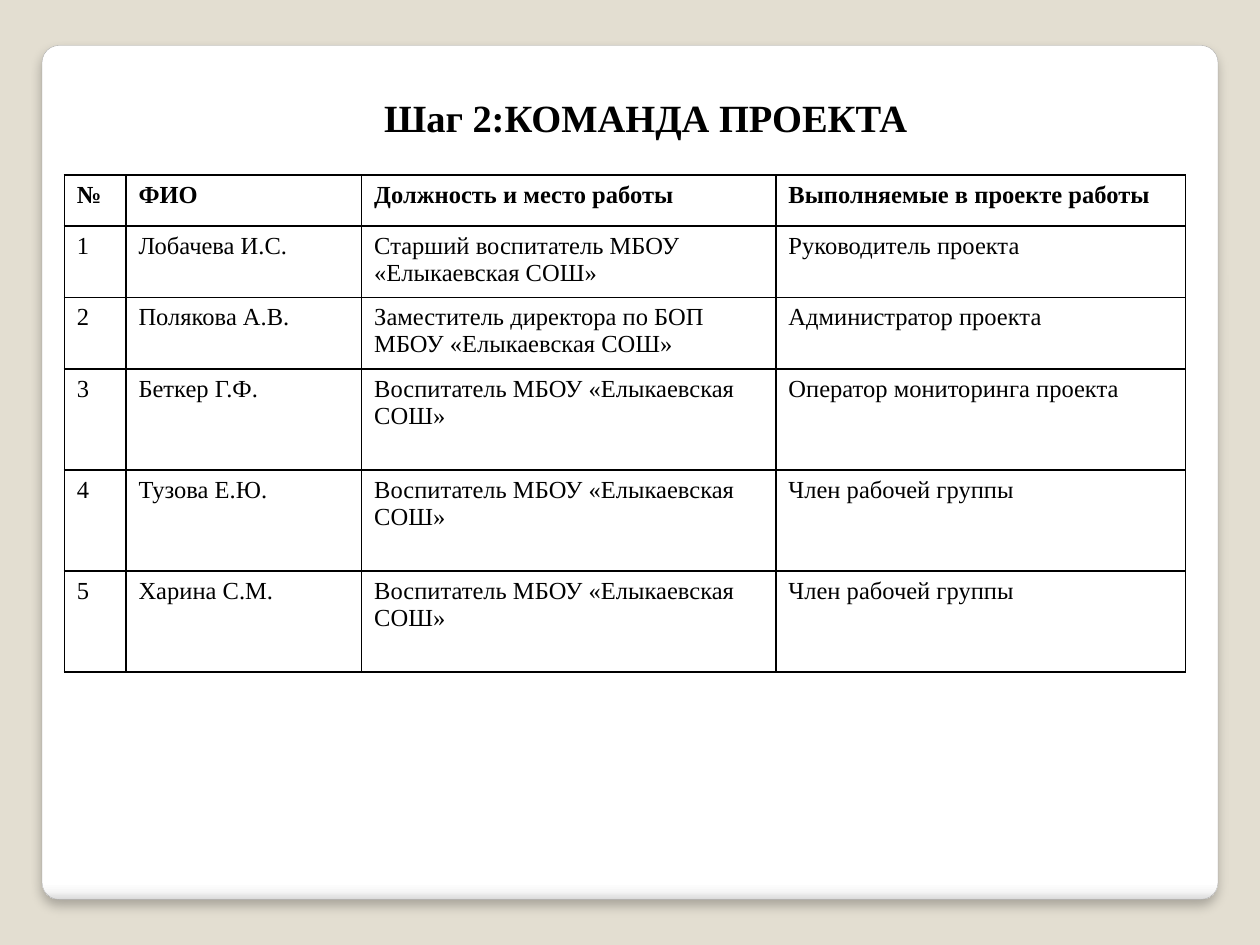
import pptx
import pptx.dml.color
import pptx.enum.shapes
import pptx.enum.text
import pptx.oxml
import pptx.oxml.ns
import pptx.util
from lxml import etree

Pt = pptx.util.Pt
FONT = "Times New Roman"
NAMESPACE = pptx.oxml.ns.nsdecls("a")


def color(hex_string):
    return pptx.dml.color.RGBColor.from_string(hex_string)


def add_text(paragraph, text, size, bold):
    run = paragraph.add_run()
    run.text = text
    run.font.name = FONT
    run.font.size = Pt(size)
    run.font.bold = bold
    run.font.color.rgb = color("000000")


presentation = pptx.Presentation()
presentation.slide_width = Pt(720)
presentation.slide_height = Pt(540)
slide = presentation.slides.add_slide(presentation.slide_layouts[6])
slide.background.fill.solid()
slide.background.fill.fore_color.rgb = color("E3DED1")

# White panel with a darker lower edge and a soft shadow
panel = slide.shapes.add_shape(
    pptx.enum.shapes.MSO_SHAPE.ROUNDED_RECTANGLE, Pt(24), Pt(26), Pt(672), Pt(488))
panel.adjustments[0] = 0.02
panel.fill.gradient()
panel.fill.gradient_angle = 270
panel.line.color.rgb = color("A4A4A4")
panel.line.width = Pt(0.16)
panel.shadow.inherit = False
properties = panel.element.spPr
stop_list = properties.find(".//" + pptx.oxml.ns.qn("a:gsLst"))
for stop in list(stop_list):
    stop_list.remove(stop)
for percent, shade in ((0, "FFFFFF"), (98, "FFFFFF"), (99, "F7F7F7"), (100, "DADADA")):
    stop_list.append(pptx.oxml.parse_xml(
        f'<a:gs {NAMESPACE} pos="{percent * 1000}"><a:srgbClr val="{shade}"/></a:gs>'))
properties.find(pptx.oxml.ns.qn("a:effectLst")).append(pptx.oxml.parse_xml(
    f'<a:outerShdw {NAMESPACE} blurRad="{Pt(6)}" dist="{Pt(4)}" dir="5400000" '
    'algn="tl" rotWithShape="0"><a:srgbClr val="000000"><a:alpha val="25000"/>'
    '</a:srgbClr></a:outerShdw>'))

title = slide.shapes.add_textbox(Pt(60), Pt(50.4), Pt(617.8), Pt(34))
title.text_frame.word_wrap = True
title_paragraph = title.text_frame.paragraphs[0]
title_paragraph.alignment = pptx.enum.text.PP_ALIGN.CENTER
add_text(title_paragraph, "Шаг 2:КОМАНДА ПРОЕКТА", 22, True)

SCHOOL = "МБОУ «Елыкаевская СОШ»"
team = [
    ("Лобачева И.С.", f"Старший воспитатель {SCHOOL}", "Руководитель проекта"),
    ("Полякова А.В.", f"Заместитель директора по БОП {SCHOOL}", "Администратор проекта"),
    ("Беткер Г.Ф.", f"Воспитатель {SCHOOL}", "Оператор мониторинга проекта"),
    ("Тузова Е.Ю.", f"Воспитатель {SCHOOL}", "Член рабочей группы"),
    ("Харина С.М.", f"Воспитатель {SCHOOL}", "Член рабочей группы"),
]
rows = [("№", "ФИО", "Должность и место работы", "Выполняемые в проекте работы")]
rows += [(str(number), *member) for number, member in enumerate(team, 1)]
column_widths = [35.2, 134.7, 236.7, 234.2]
row_heights = [29.2, 40.8, 40.8, 57.7, 57.7, 57.7]

table = slide.shapes.add_table(
    len(rows), len(column_widths), Pt(36.8), Pt(100),
    Pt(sum(column_widths)), Pt(sum(row_heights))).table
table.first_row = False
table.horz_banding = False
for column, width in zip(table.columns, column_widths):
    column.width = Pt(width)
for row_index, (row, height, texts) in enumerate(zip(table.rows, row_heights, rows)):
    row.height = Pt(height)
    for cell, text in zip(row.cells, texts):
        add_text(cell.text_frame.paragraphs[0], text, 14, row_index == 0)
        cell_properties = cell._tc.get_or_add_tcPr()
        for side in ("lnL", "lnR", "lnT", "lnB"):
            border = etree.SubElement(
                cell_properties, pptx.oxml.ns.qn(f"a:{side}"), w=str(Pt(1)))
            border_fill = etree.SubElement(border, pptx.oxml.ns.qn("a:solidFill"))
            etree.SubElement(border_fill, pptx.oxml.ns.qn("a:srgbClr"), val="000000")
        cell.fill.background()

presentation.save("out.pptx")
